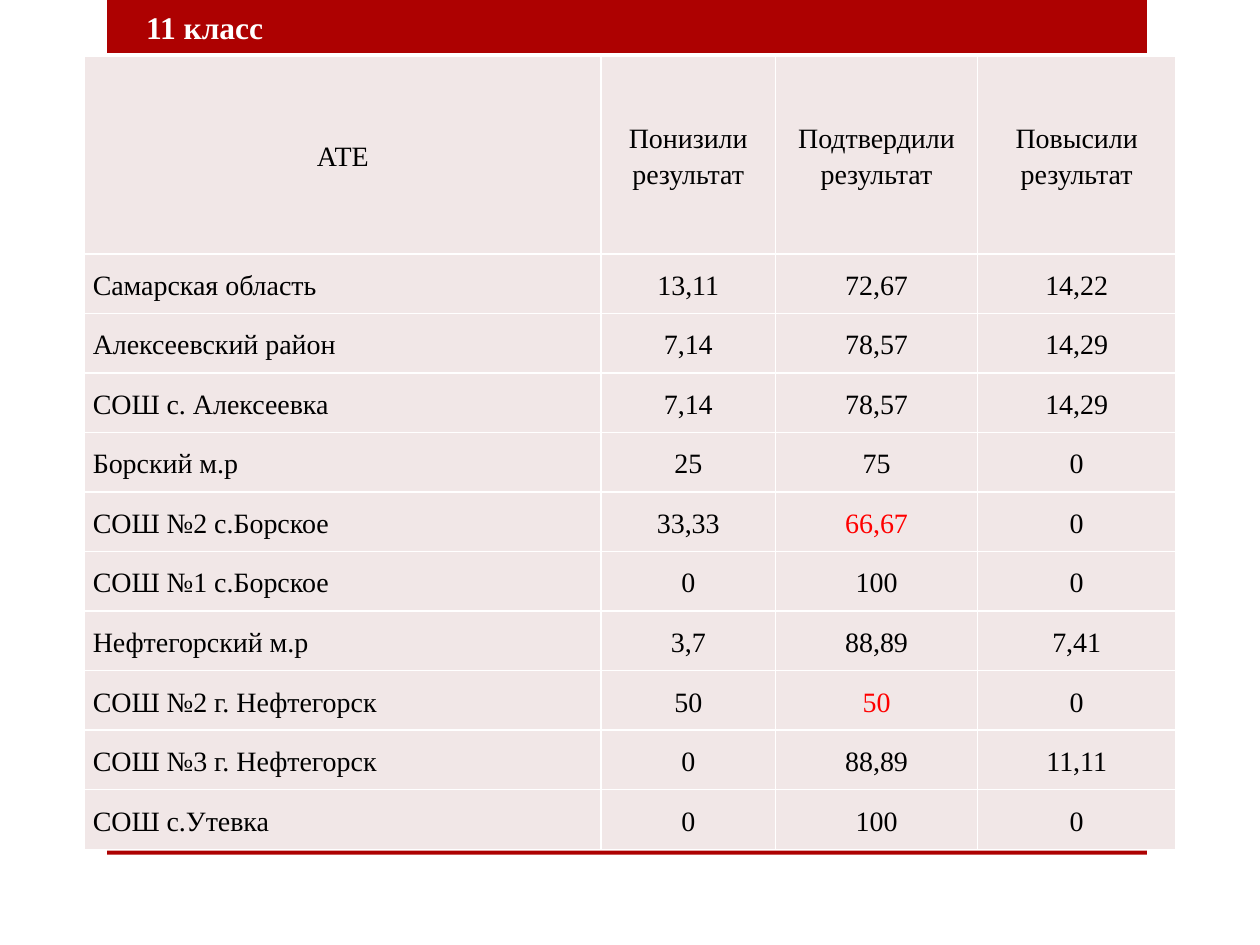
import pptx
import pptx.dml.color
import pptx.enum.shapes
import pptx.enum.text
import pptx.oxml
import pptx.oxml.ns
import pptx.util

Cm = pptx.util.Cm
Pt = pptx.util.Pt
ALIGN = pptx.enum.text.PP_ALIGN
MIDDLE = pptx.enum.text.MSO_ANCHOR.MIDDLE

HEADINGS = ("АТЕ", "Понизили результат", "Подтвердили результат", "Повысили результат")
RESULTS = (
    ("Самарская область", "13,11", "72,67", "14,22"),
    ("Алексеевский район", "7,14", "78,57", "14,29"),
    ("СОШ с. Алексеевка", "7,14", "78,57", "14,29"),
    ("Борский м.р", "25", "75", "0"),
    ("СОШ №2 с.Борское", "33,33", "66,67", "0"),
    ("СОШ №1 с.Борское", "0", "100", "0"),
    ("Нефтегорский м.р", "3,7", "88,89", "7,41"),
    ("СОШ №2 г. Нефтегорск", "50", "50", "0"),
    ("СОШ №3 г. Нефтегорск", "0", "88,89", "11,11"),
    ("СОШ с.Утевка", "0", "100", "0"),
)
CONFIRMED_COLUMN = 2
LOW_CONFIRMED = ("66,67", "50")
COLUMN_WIDTHS = (10.42, 3.51, 4.08, 3.99)
HEADER_HEIGHT, ROW_HEIGHT = 3.99, 1.2


def color(value):
    return pptx.dml.color.RGBColor.from_string(value)


def apply(target, values):
    """Set each named attribute of target."""
    for name, value in values.items():
        setattr(target, name, value)


class ResultsPage:
    font = "Times New Roman"
    accent, cell_fill = "AD0101", "F1E7E7"
    white, black, red = "FFFFFF", "000000", "FF0000"
    cell_format = {
        "margin_left": Cm(0.17), "margin_right": Cm(0.17),
        "margin_top": Cm(0.1), "margin_bottom": Cm(0.1),
        "vertical_anchor": MIDDLE,
    }

    def __init__(self, deck):
        self.page = deck.slides.add_slide(deck.slide_layouts[5])

    def add_span(self, para, text, size, ink, bold=False):
        span = para.add_run()
        span.text = text
        apply(span.font, {"name": self.font, "size": Pt(size), "bold": bold})
        span.font.color.rgb = color(ink)

    def bar(self, top, height):
        box = self.page.shapes.add_shape(
            pptx.enum.shapes.MSO_SHAPE.RECTANGLE, Cm(2.16), Cm(top), Cm(20.96), Cm(height))
        box.shadow.inherit = False
        box.fill.solid()
        box.fill.fore_color.rgb = color(self.accent)
        box.line.fill.background()

    def title(self, text):
        """Fill the title placeholder and bring it in front of the bar."""
        box = self.page.shapes.title
        apply(box, {"left": Cm(2.69), "top": Cm(0.03), "width": Cm(2.9), "height": Cm(1.02)})
        apply(box.text_frame, {
            "word_wrap": False, "vertical_anchor": MIDDLE,
            "auto_size": pptx.enum.text.MSO_AUTO_SIZE.NONE})
        para = box.text_frame.paragraphs[0]
        para.alignment = ALIGN.LEFT
        self.add_span(para, text, 18, self.white, bold=True)
        self.page.shapes.element.append(box.element)

    def table(self, rows):
        heights = [HEADER_HEIGHT] + [ROW_HEIGHT] * (len(rows) - 1)
        frame = self.page.shapes.add_table(
            len(rows), len(COLUMN_WIDTHS), Cm(1.7), Cm(1.13),
            Cm(sum(COLUMN_WIDTHS)), Cm(sum(heights)))
        grid = frame.table
        for column, width in zip(grid.columns, COLUMN_WIDTHS):
            column.width = Cm(width)
        for row, height in zip(grid.rows, heights):
            row.height = Cm(height)
        for i, texts in enumerate(rows):
            for j, text in enumerate(texts):
                low = j == CONFIRMED_COLUMN and text in LOW_CONFIRMED
                align = ALIGN.LEFT if i and j == 0 else ALIGN.CENTER
                self.cell(grid.cell(i, j), text, align, self.red if low else self.black)
        self.borders(frame)

    def cell(self, cell, text, align, ink):
        apply(cell, self.cell_format)
        cell.fill.solid()
        cell.fill.fore_color.rgb = color(self.cell_fill)
        para = cell.text_frame.paragraphs[0]
        apply(para, {"alignment": align, "line_spacing": 1.14})
        self.add_span(para, text, 16, ink)

    def borders(self, frame):
        """Draw a thin white line on every side of every cell."""
        for properties in frame.element.iter(pptx.oxml.ns.qn("a:tcPr")):
            for place, side in enumerate("LRTB"):
                properties.insert(place, pptx.oxml.parse_xml(
                    f'<a:ln{side} {pptx.oxml.ns.nsdecls("a")} w="{Pt(1)}"><a:solidFill>'
                    f'<a:srgbClr val="{self.white}"/></a:solidFill></a:ln{side}>'))


def main():
    deck = pptx.Presentation()
    apply(deck, {"slide_width": Cm(25.4), "slide_height": Cm(19.05)})
    results = ResultsPage(deck)
    results.bar(0, 1.07)
    results.bar(17.15, 0.08)
    results.table((HEADINGS,) + RESULTS)
    results.title("11 класс")
    deck.save("out.pptx")


if __name__ == "__main__":
    main()
